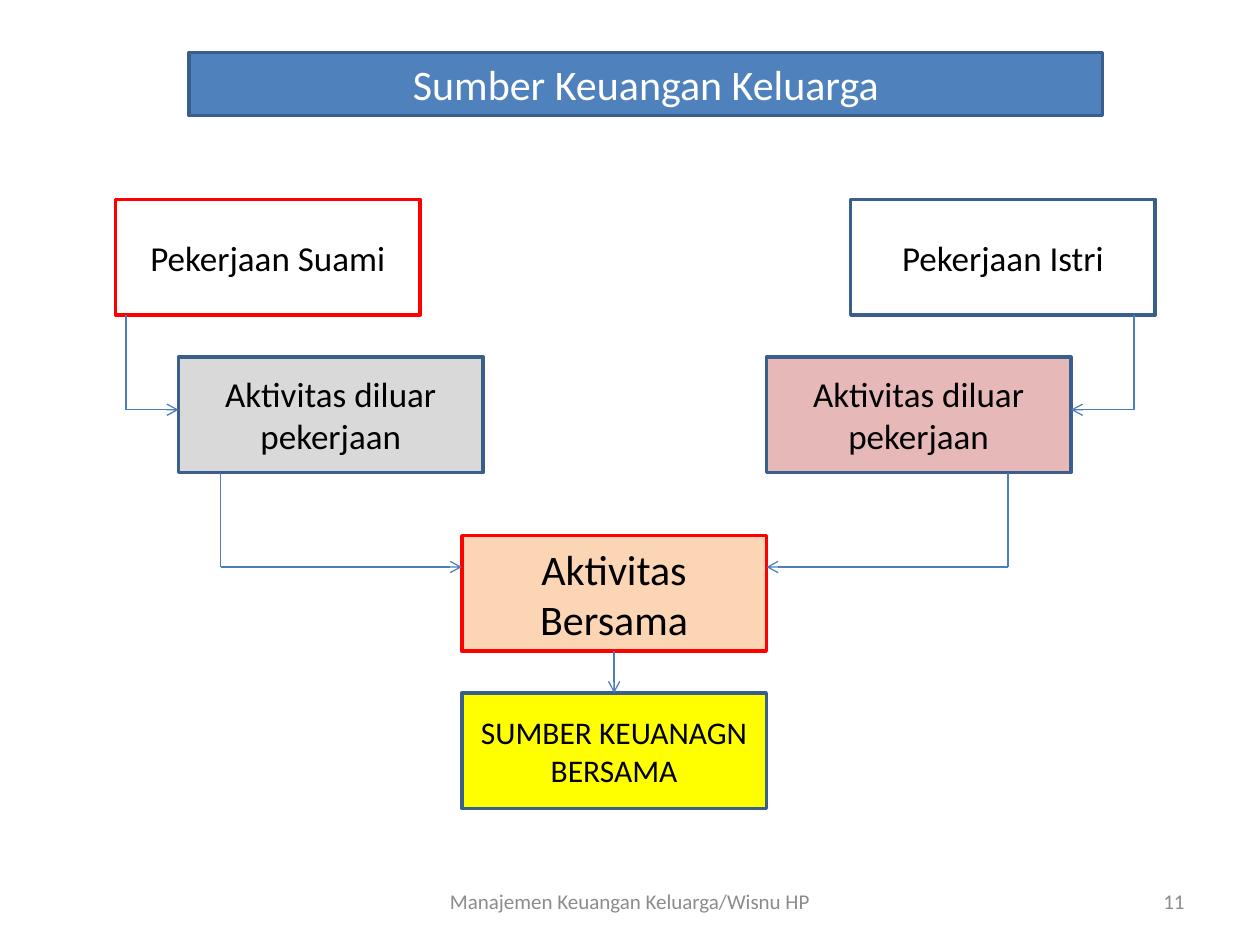
from dataclasses import dataclass

from lxml import etree
from pptx import Presentation
from pptx.dml.color import RGBColor
from pptx.enum.shapes import MSO_CONNECTOR, MSO_SHAPE
from pptx.enum.text import MSO_ANCHOR, PP_ALIGN
from pptx.oxml.ns import qn
from pptx.util import Cm, Pt

RECTANGLE = MSO_SHAPE.RECTANGLE
STRAIGHT = MSO_CONNECTOR.STRAIGHT
MIDDLE = MSO_ANCHOR.MIDDLE
CENTER, RIGHT = PP_ALIGN.CENTER, PP_ALIGN.RIGHT


@dataclass(frozen=True)
class Theme:
    font: str = "Calibri"
    blue: str = "4F81BD"
    border: str = "3A5F8C"
    arrow: str = "4B7EBC"
    red: str = "FF0000"
    white: str = "FFFFFF"
    black: str = "000000"
    gray: str = "D9D9D9"
    pink: str = "E6B9B8"
    peach: str = "FCD5B5"
    yellow: str = "FFFF00"
    muted: str = "8C8C8C"
    large: int = 24
    medium: int = 20
    small: int = 18
    footer: int = 12


theme = Theme()


def write_text(shape, text, size, color, alignment=CENTER):
    frame = shape.text_frame
    frame.word_wrap = True
    frame.vertical_anchor = MIDDLE
    frame.text = text
    for paragraph in frame.paragraphs:
        paragraph.alignment = alignment
        paragraph.font.name = theme.font
        paragraph.font.size = Pt(size)
        paragraph.font.color.rgb = RGBColor.from_string(color)


presentation = Presentation()
presentation.slide_width, presentation.slide_height = Cm(25.4), Cm(19.05)
slide = presentation.slides.add_slide(presentation.slide_layouts[6])

# Box grid, in centimetres
box_width, box_height = 6.14, 2.33
husband_x, wife_x = 2.33, 17.15
husband_extra_x, wife_extra_x = 3.6, 15.45
shared_x = 9.31
job_y, extra_y, shared_y, result_y = 4.02, 7.2, 10.8, 13.97

# Title and boxes: text, left, top, width, height, fill, border, size, text colour
boxes = [
    ("Sumber Keuangan Keluarga", 3.81, 1.06, 18.42, 1.27,
     theme.blue, theme.border, theme.large, theme.white),
]
for text, left, top, fill, border, size in [
    ("Pekerjaan Istri", wife_x, job_y, theme.white, theme.border, theme.medium),
    ("Pekerjaan Suami", husband_x, job_y, theme.white, theme.red, theme.medium),
    ("Aktivitas diluar pekerjaan", husband_extra_x, extra_y, theme.gray, theme.border, theme.medium),
    ("Aktivitas diluar pekerjaan", wife_extra_x, extra_y, theme.pink, theme.border, theme.medium),
    ("Aktivitas Bersama", shared_x, shared_y, theme.peach, theme.red, theme.large),
    ("SUMBER KEUANAGN\nBERSAMA", shared_x, result_y, theme.yellow, theme.border, theme.small),
]:
    boxes.append((text, left, top, box_width, box_height, fill, border, size, theme.black))

for text, left, top, width, height, fill, border, size, color in boxes:
    box = slide.shapes.add_shape(RECTANGLE, Cm(left), Cm(top), Cm(width), Cm(height))
    box.shadow.inherit = False
    box.fill.solid()
    box.fill.fore_color.rgb = RGBColor.from_string(fill)
    box.line.color.rgb = RGBColor.from_string(border)
    box.line.width = Pt(2)
    write_text(box, text, size, color)

# Arrow routes: each list of points ends in an arrowhead
job_bottom, extra_bottom = job_y + box_height, extra_y + box_height
extra_entry, shared_entry = 8.26, 11.43
shared_center = shared_x + box_width / 2
routes = [
    [(2.54, job_bottom), (2.54, extra_entry), (husband_extra_x, extra_entry)],
    [(22.86, job_bottom), (22.86, extra_entry), (wife_extra_x + box_width, extra_entry)],
    [(4.45, extra_bottom), (4.45, shared_entry), (shared_x, shared_entry)],
    [(20.32, extra_bottom), (20.32, shared_entry), (shared_x + box_width, shared_entry)],
    [(shared_center, shared_y + box_height), (shared_center, result_y)],
]
for points in routes:
    for start, end in zip(points, points[1:]):
        connector = slide.shapes.add_connector(STRAIGHT, *map(Cm, start + end))
        connector.line.color.rgb = RGBColor.from_string(theme.arrow)
        connector.line.width = Pt(0.75)
        if end == points[-1]:
            etree.SubElement(connector.line._get_or_add_ln(), qn("a:tailEnd"), type="arrow")
        etree.SubElement(connector._element.spPr, qn("a:effectLst"))

# Footer and slide number
for text, left, width, alignment in [
    ("Manajemen Keuangan Keluarga/Wisnu HP", 8.68, 8.04, CENTER),
    ("11", 18.2, 5.93, RIGHT),
]:
    footer = slide.shapes.add_textbox(Cm(left), Cm(17.66), Cm(width), Cm(1.01))
    write_text(footer, text, theme.footer, theme.muted, alignment)

presentation.save("out.pptx")
